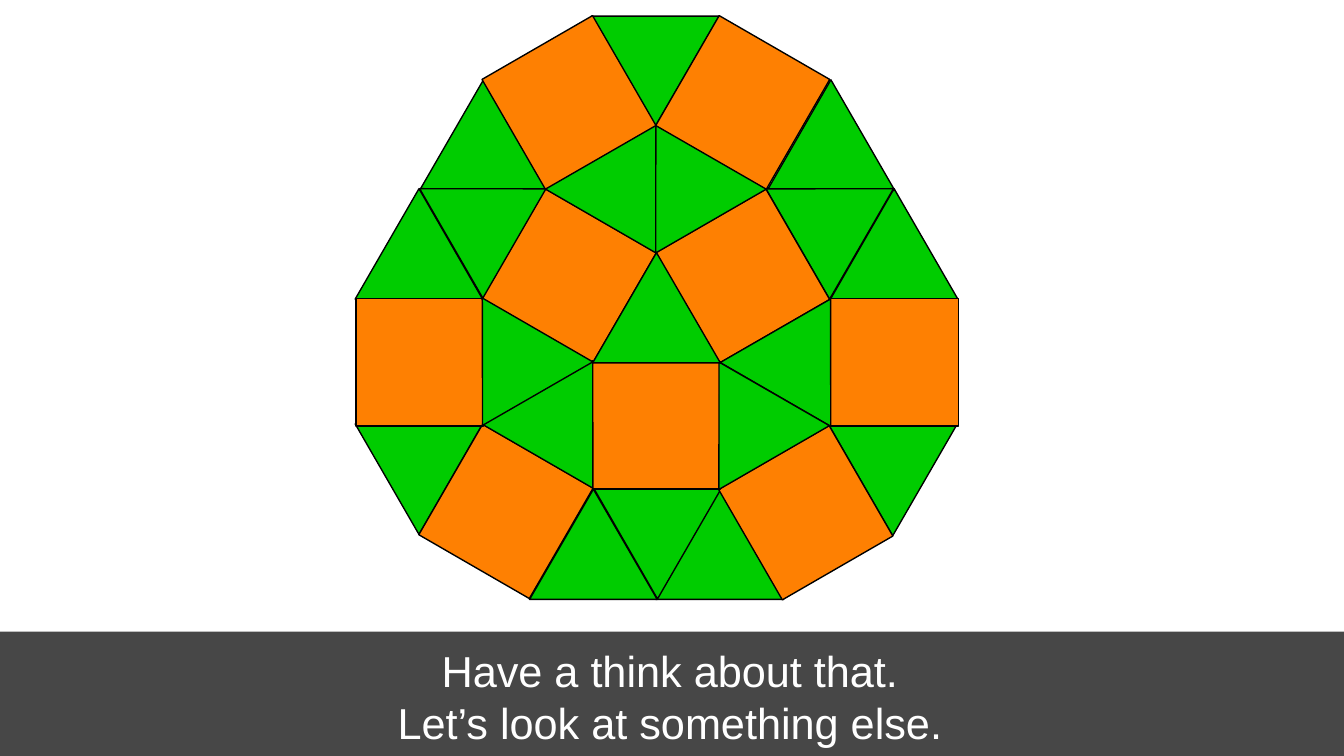
from pptx import Presentation
from pptx.util import Inches, Pt
from pptx.dml.color import RGBColor
from pptx.enum.shapes import MSO_SHAPE as SHAPE
from pptx.enum.text import MSO_ANCHOR, MSO_AUTO_SIZE, PP_ALIGN
from lxml import etree

# Content: each tile is (left, top, rotation); groups run from back to front
TITLE = "Have a think about that.\vLet’s look at something else."
SIDE, TRI_HEIGHT = 0.95, 0.82
GREEN, ORANGE, BLACK, WHITE = "00CC00", "FE8002", "000000", "FFFFFF"

OUTER_TRIANGLES = [
    (4.88, 3.64, 0), (3.94, 3.64, 0), (6.05, 2.96, 300), (6.06, 1.61, 240),
    (5.59, 0.80, 240), (2.76, 2.95, 60), (2.76, 1.61, 120), (3.24, 0.80, 120),
    (4.40, 0.12, 180), (5.58, 1.20, 300), (3.24, 1.20, 60), (4.30, 3.43, 300),
]
SQUARES = [
    (5.52, 3.34, 330), (3.29, 3.33, 30), (2.65, 2.22, 0), (6.18, 2.22, 0),
    (3.76, 0.29, 330), (5.05, 0.29, 30), (5.05, 1.58, 330), (4.41, 2.69, 0),
    (3.76, 1.58, 30),
]
INNER_TRIANGLES = [
    (3.73, 2.63, 30), (3.32, 2.40, 210), (4.20, 0.88, 30), (4.61, 0.88, 330),
    (5.50, 2.17, 30), (5.08, 2.64, 330), (4.41, 1.88, 0),
]
TILE_GROUPS = [
    (SHAPE.ISOSCELES_TRIANGLE, TRI_HEIGHT, GREEN, OUTER_TRIANGLES),
    (SHAPE.RECTANGLE, SIDE, ORANGE, SQUARES),
    (SHAPE.ISOSCELES_TRIANGLE, TRI_HEIGHT, GREEN, INNER_TRIANGLES),
]


def rgb(value):
    return RGBColor.from_string(value)


def add_filled(s, kind, left, top, width, height, color):
    sp = s.shapes.add_shape(kind, *map(Inches, (left, top, width, height)))
    sp.shadow.inherit = False
    sp.fill.solid()
    sp.fill.fore_color.rgb = rgb(color)
    return sp


# 16:9 page
prs = Presentation()
prs.slide_width = Inches(10)
prs.slide_height = prs.slide_width * 9 // 16
s = prs.slides.add_slide(prs.slide_layouts[5])
title = s.shapes.title

# Translucent caption band, behind the title
band = add_filled(s, SHAPE.RECTANGLE, 0, 4.7, 10, 0.94, BLACK)
band.line.fill.background()
color = band.fill._xPr.solidFill.srgbClr
etree.SubElement(color, color.tag.replace("srgbClr", "alpha"), val="72000")
title._element.addprevious(band._element)

# Caption
title.left, title.top, title.width, title.height = map(Inches, (1.61, 4.71, 6.75, 0.94))
tf = title.text_frame
tf.text = TITLE
tf.word_wrap = True
tf.auto_size = MSO_AUTO_SIZE.NONE
tf.vertical_anchor = MSO_ANCHOR.MIDDLE
p = tf.paragraphs[0]
p.alignment = PP_ALIGN.CENTER
p.line_spacing = 1.0
p.font.name, p.font.size = "Arial", Pt(23.2)
p.font.color.rgb = rgb(WHITE)

# Tiling
for kind, height, fill, tiles in TILE_GROUPS:
    for left, top, rotation in tiles:
        tile = add_filled(s, kind, left, top, SIDE, height, fill)
        tile.rotation = rotation
        tile.line.color.rgb = rgb(BLACK)
        tile.line.width = Pt(0.75)

prs.save("out.pptx")
